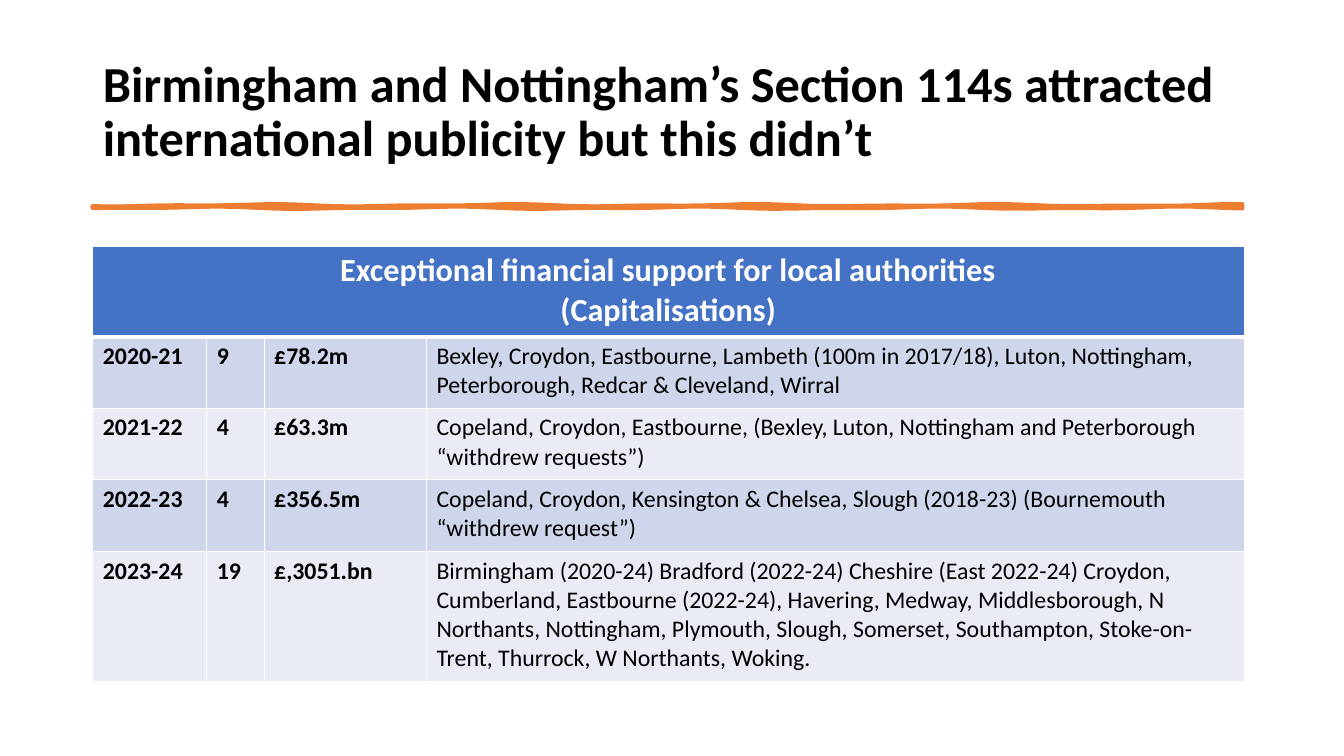
from dataclasses import dataclass
from math import sin

from lxml.etree import SubElement
from pptx import Presentation
from pptx.dml.color import RGBColor
from pptx.enum.text import MSO_ANCHOR, MSO_AUTO_SIZE, PP_ALIGN
from pptx.oxml.ns import qn
from pptx.util import Inches, Pt


@dataclass(frozen=True)
class Theme:
    font: str = "Calibri"
    ink: str = "000000"
    paper: str = "FFFFFF"
    accent: str = "ED7D31"
    header: str = "4472C4"
    bands: tuple = ("CFD5EA", "E9EBF5")
    title_size: int = 36
    header_size: int = 23
    body_size: int = 17
    rule_width: float = 3.25
    grid_width: int = 1
    header_line: int = 3


THEME = Theme()
PAGE_WIDTH, PAGE_HEIGHT = Inches(13.33), Inches(7.5)
LEFT = Inches(0.92)
RULE_TOP, RULE_WIDTH = Inches(2.04), Inches(11.4)
TABLE_TOP = Inches(2.44)
COLUMNS = (1.13, 0.57, 1.61, 8.11)
ROWS = (0.9, 0.71, 0.71, 0.71, 1.29)

TITLE = ("Birmingham and Nottingham’s Section 114s attracted "
         "international publicity but this didn’t")
HEADER = ("Exceptional financial support for local authorities", "(Capitalisations)")
SUPPORT = (
    ("2020-21", "9", "£78.2m",
     "Bexley, Croydon, Eastbourne, Lambeth (100m in 2017/18), Luton, Nottingham, "
     "Peterborough, Redcar & Cleveland, Wirral"),
    ("2021-22", "4", "£63.3m",
     "Copeland, Croydon, Eastbourne, (Bexley, Luton, Nottingham and Peterborough "
     "“withdrew requests”)"),
    ("2022-23", "4", "£356.5m",
     "Copeland, Croydon, Kensington & Chelsea, Slough (2018-23) (Bournemouth "
     "“withdrew request”)"),
    ("2023-24", "19", "£,3051.bn",
     "Birmingham (2020-24) Bradford (2022-24) Cheshire (East 2022-24) Croydon, "
     "Cumberland, Eastbourne (2022-24), Havering, Medway, Middlesborough, "
     "N Northants, Nottingham, Plymouth, Slough, Somerset, Southampton, "
     "Stoke-on-Trent, Thurrock, W Northants, Woking."),
)


def colour(code):
    return RGBColor.from_string(code)


def add_span(para, text, size, code, bold):
    span = para.add_run()
    span.text = text
    span.font.name = THEME.font
    span.font.size = Pt(size)
    span.font.bold = bold
    span.font.color.rgb = colour(code)


def place_title(page):
    box = page.shapes.title
    box.left, box.top, box.width, box.height = LEFT, Inches(0.4), Inches(11.5), Inches(1.45)
    frame = box.text_frame
    frame.auto_size = MSO_AUTO_SIZE.NONE
    frame.word_wrap = True
    frame.vertical_anchor = MSO_ANCHOR.MIDDLE
    para = frame.paragraphs[0]
    para.alignment = PP_ALIGN.LEFT
    para.line_spacing = 0.9
    add_span(para, TITLE, THEME.title_size, THEME.ink, True)


def add_brush_rule(page):
    """Draw a ribbon whose two edges wander separately, like a brush stroke."""
    steps = 114

    def edge(base, phase):
        for step in range(steps + 1):
            x = step / 10
            wave = 0.008 * sin(2.6 * x + phase) + 0.005 * sin(5.3 * x + 2 * phase)
            yield LEFT + RULE_WIDTH * step // steps, RULE_TOP + Inches(base + wave)

    outline = list(edge(0, 0.5)) + list(edge(0.02, 2))[::-1]
    builder = page.shapes.build_freeform(*outline[0])
    builder.add_line_segments(outline[1:], close=True)
    rule = builder.convert_to_shape()
    rule.shadow.inherit = False
    rule.fill.solid()
    rule.fill.fore_color.rgb = colour(THEME.accent)
    rule.line.color.rgb = colour(THEME.accent)
    rule.line.width = Pt(THEME.rule_width)


def style_cell(cell, fill, top, bottom):
    """Set the white borders first, as the schema wants them before the fill."""
    properties = cell._tc.get_or_add_tcPr()
    widths = {"L": THEME.grid_width, "R": THEME.grid_width, "T": top, "B": bottom}
    for side, width in widths.items():
        line = SubElement(properties, qn(f"a:ln{side}"), w=str(Pt(width)))
        paint = SubElement(line, qn("a:solidFill"))
        SubElement(paint, qn("a:srgbClr"), val=THEME.paper)
    cell.fill.solid()
    cell.fill.fore_color.rgb = colour(fill)


def add_support_table(page):
    frame = page.shapes.add_table(len(ROWS), len(COLUMNS), LEFT, TABLE_TOP,
                                  Inches(sum(COLUMNS)), Inches(sum(ROWS)))
    table = frame.table
    for column, width in zip(table.columns, COLUMNS):
        column.width = Inches(width)
    for row, height in zip(table.rows, ROWS):
        row.height = Inches(height)

    title_cell = table.cell(0, 0)
    title_cell.merge(table.cell(0, len(COLUMNS) - 1))
    for cell in table.rows[0].cells:
        style_cell(cell, THEME.header, THEME.grid_width, THEME.header_line)
    text = title_cell.text_frame
    for index, line in enumerate(HEADER):
        para = text.add_paragraph() if index else text.paragraphs[0]
        para.alignment = PP_ALIGN.CENTER
        add_span(para, line, THEME.header_size, THEME.paper, True)

    for row, values in enumerate(SUPPORT, start=1):
        top = THEME.header_line if row == 1 else THEME.grid_width
        for column, value in enumerate(values):
            cell = table.cell(row, column)
            style_cell(cell, THEME.bands[(row - 1) % 2], top, THEME.grid_width)
            is_label = column < len(COLUMNS) - 1
            add_span(cell.text_frame.paragraphs[0], value,
                     THEME.body_size, THEME.ink, is_label)


def main():
    deck = Presentation()
    deck.slide_width, deck.slide_height = PAGE_WIDTH, PAGE_HEIGHT
    page = deck.slides.add_slide(deck.slide_layouts.get_by_name("Title Only"))
    place_title(page)
    add_brush_rule(page)
    add_support_table(page)
    deck.save("out.pptx")


if __name__ == "__main__":
    main()
